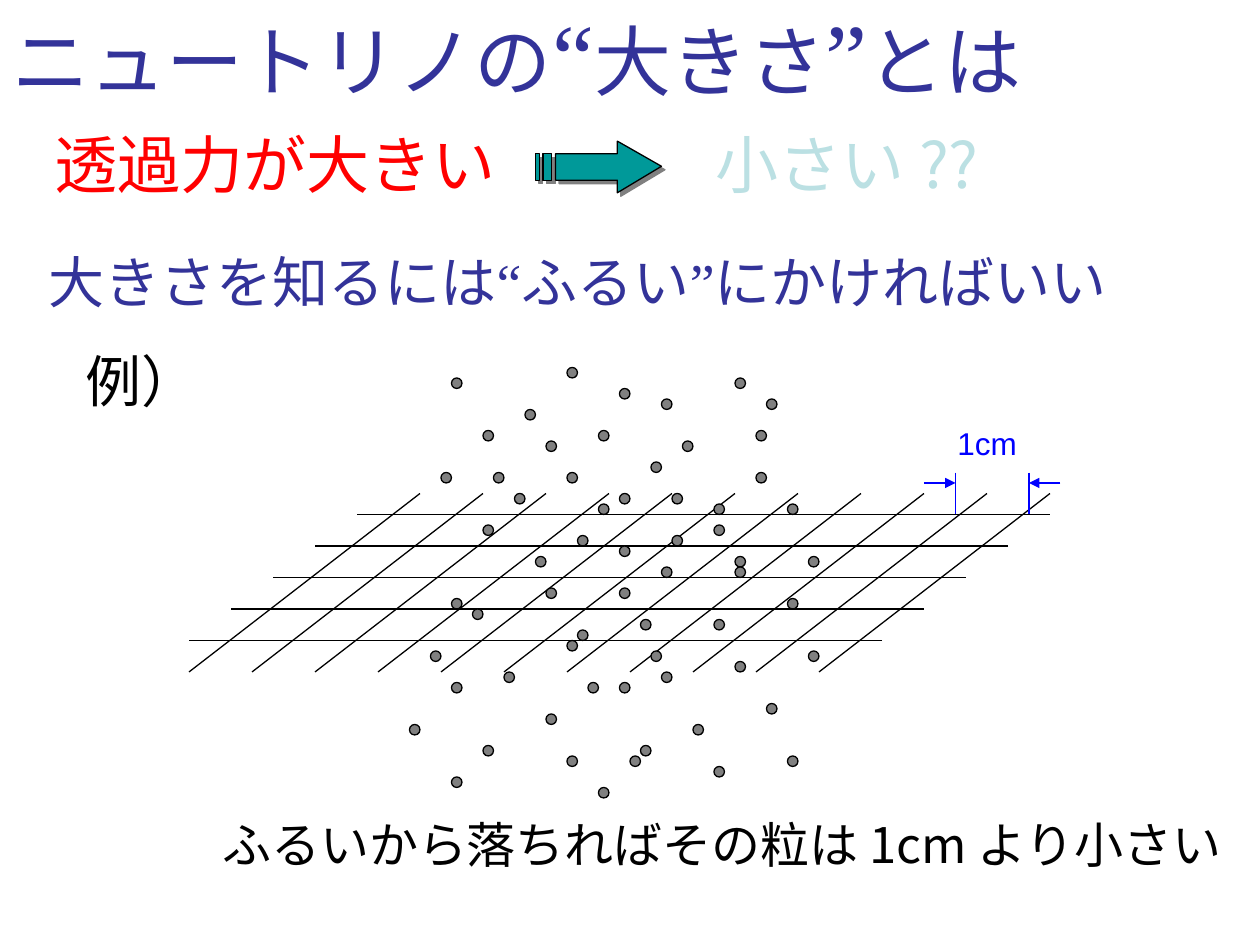
"""Build the slide on judging the size of a neutrino with a sieve."""
from dataclasses import dataclass

from lxml.etree import SubElement
from pptx import Presentation
from pptx.dml.color import RGBColor
from pptx.enum.shapes import MSO_CONNECTOR as Link, MSO_SHAPE as Shape
from pptx.enum.text import MSO_ANCHOR as Anchor, MSO_AUTO_SIZE as Fit, PP_ALIGN as Align
from pptx.oxml.ns import qn
from pptx.util import Emu, Inches, Pt


@dataclass(frozen=True)
class Theme:
    sans: str = "Noto Sans CJK JP"
    serif: str = "Times New Roman"
    label: str = "Arial"
    navy: str = "333399"
    red: str = "FF0000"
    pale: str = "BBE0E3"
    teal: str = "009999"
    gray: str = "808080"
    black: str = "000000"
    blue: str = "0000FF"
    title: int = 44
    quote: int = 54
    claim: int = 36
    lead: int = 32
    result: int = 28
    small: int = 18
    hairline: float = 0.75


THEME = Theme()
CELLS_PER_INCH = 12
TITLE = ["ニュートリノの", "“", "大きさ", "”", "とは"]
TITLE_PLACE = (0, 0, 113.9, 10)
TEXTS = [
    (["透過力が大きい"], (4, 11.4, 46, 8.4), dict(size=THEME.claim, color=THEME.red, shadow=True)),
    (["小さい ??"], (67, 11.4, 40, 8.4), dict(size=THEME.claim, color=THEME.pale, shadow=True)),
    (["大きさを知るには", "“", "ふるい", "”", "にかければいい"], (3.4, 23, 112.7, 7.6),
     dict(size=THEME.lead, color=THEME.navy)),
    (["例）"], (7, 32.4, 19, 7.6), dict(size=THEME.lead)),
    (["ふるいから落ちればその粒は 1cm より小さい"], (20, 77, 99, 6.8), dict(size=THEME.result)),
    (["1cm"], (90, 39.8, 9, 5.2), dict(size=THEME.small, color=THEME.blue, font=THEME.label)),
]
ARROW_PARTS = [
    [(490, 112), (490, 122), (441, 122), (441, 143), (490, 143), (490, 153), (525, 132)],
    [(431, 122), (431, 143), (438, 143), (438, 122)],
    [(425, 122), (425, 143), (428, 143), (428, 122)],
]
SLANTS, BARS = 11, 5
GRAINS = {
    35: [54], 36: [43, 70], 37: [59], 38: [63, 73], 39: [50], 41: [46, 57, 72],
    42: [52, 65], 44: [62], 45: [42, 47, 54, 72], 47: [49, 59, 64], 48: [57, 68, 75],
    50: [46, 68], 51: [55, 64], 52: [59], 53: [51, 70, 77], 54: [63, 70],
    56: [52, 59], 57: [43, 75], 58: [45], 59: [61, 68], 60: [55], 61: [54],
    62: [41, 62, 77], 63: [70], 64: [48, 63], 65: [43, 56, 59], 67: [73], 68: [52],
    69: [39, 66], 71: [46, 61], 72: [54, 60, 75], 73: [68], 74: [43], 75: [57],
}
GAP_EDGES = [(91, -3), (98, 3)]


def cells(*values):
    return [Emu(round(value * Inches(1) / CELLS_PER_INCH)) for value in values]


def rgb(color):
    return RGBColor.from_string(color)


def add_shadow(effects):
    shade = SubElement(effects, qn("a:outerShdw"), dist=str(Pt(2.8)), dir="2700000", algn="ctr", rotWithShape="0")
    SubElement(shade, qn("a:srgbClr"), val=THEME.gray)


def write(box, pieces, size, color=THEME.black, font=THEME.sans, quote_size=None,
          shadow=False, anchor=Anchor.TOP):
    frame = box.text_frame
    frame.word_wrap, frame.auto_size, frame.vertical_anchor = True, Fit.NONE, anchor
    para = frame.paragraphs[0]
    para.alignment = Align.LEFT
    for piece in pieces:
        quote = piece in "“”"
        span = para.add_run()
        span.text = piece
        span.font.size = Pt(quote_size or size if quote else size)
        span.font.color.rgb = rgb(color)
        props = span.font._element
        if shadow:
            add_shadow(SubElement(props, qn("a:effectLst")))
        span.font.name = THEME.serif if quote else font
        SubElement(props, qn("a:ea"), typeface=span.font.name)


def style(shape, fill):
    shape.fill.solid()
    shape.fill.fore_color.rgb = rgb(fill)
    shape.line.color.rgb = rgb(THEME.black)
    shape.line.width = Pt(THEME.hairline)
    shape.shadow.inherit = False


def add_line(shapes, start, end, color=THEME.black, arrow=False):
    line = shapes.add_connector(Link.STRAIGHT, *cells(*start, *end))
    line.line.color.rgb = rgb(color)
    line.line.width = Pt(THEME.hairline)
    if arrow:
        SubElement(line.line._get_or_add_ln(), qn("a:tailEnd"), type="triangle")
    SubElement(line._element.spPr, qn("a:effectLst"))


def add_block_arrow(shapes):
    first, *others = ARROW_PARTS
    builder = shapes.build_freeform(*first[0], scale=Inches(1) / 100)
    builder.add_line_segments(first[1:])
    for part in others:
        builder.move_to(*part[0])
        builder.add_line_segments(part[1:])
    arrow = builder.convert_to_shape()
    style(arrow, THEME.teal)
    add_shadow(arrow._element.spPr.find(qn("a:effectLst")))


def add_sieve(shapes):
    mesh = shapes.add_group_shape().shapes
    for column in range(SLANTS):
        add_line(mesh, (40 + 6 * column, 47), (18 + 6 * column, 64))
    for row in range(BARS):
        right, top = 100 - 4 * row, 49 + 3 * row
        add_line(mesh, (right, top), (right - 66, top))
    for top, lefts in GRAINS.items():
        for left in lefts:
            style(shapes.add_shape(Shape.OVAL, *cells(left, top, 1, 1)), THEME.gray)
    for edge, offset in GAP_EDGES:
        add_line(shapes, (edge, 45), (edge, 49), THEME.blue)
        add_line(shapes, (edge + offset, 46), (edge, 46), THEME.blue, arrow=True)


def main():
    deck = Presentation()
    deck.slide_width, deck.slide_height = Inches(10), Inches(7.5)
    page = deck.slides.add_slide(deck.slide_layouts[5])
    title = page.shapes.title
    title.left, title.top, title.width, title.height = cells(*TITLE_PLACE)
    write(title, TITLE, THEME.title, color=THEME.navy, quote_size=THEME.quote,
          shadow=True, anchor=Anchor.MIDDLE)
    add_block_arrow(page.shapes)
    for pieces, place, look in TEXTS:
        write(page.shapes.add_textbox(*cells(*place)), pieces, **look)
    add_sieve(page.shapes)
    deck.save("out.pptx")


if __name__ == "__main__":
    main()
